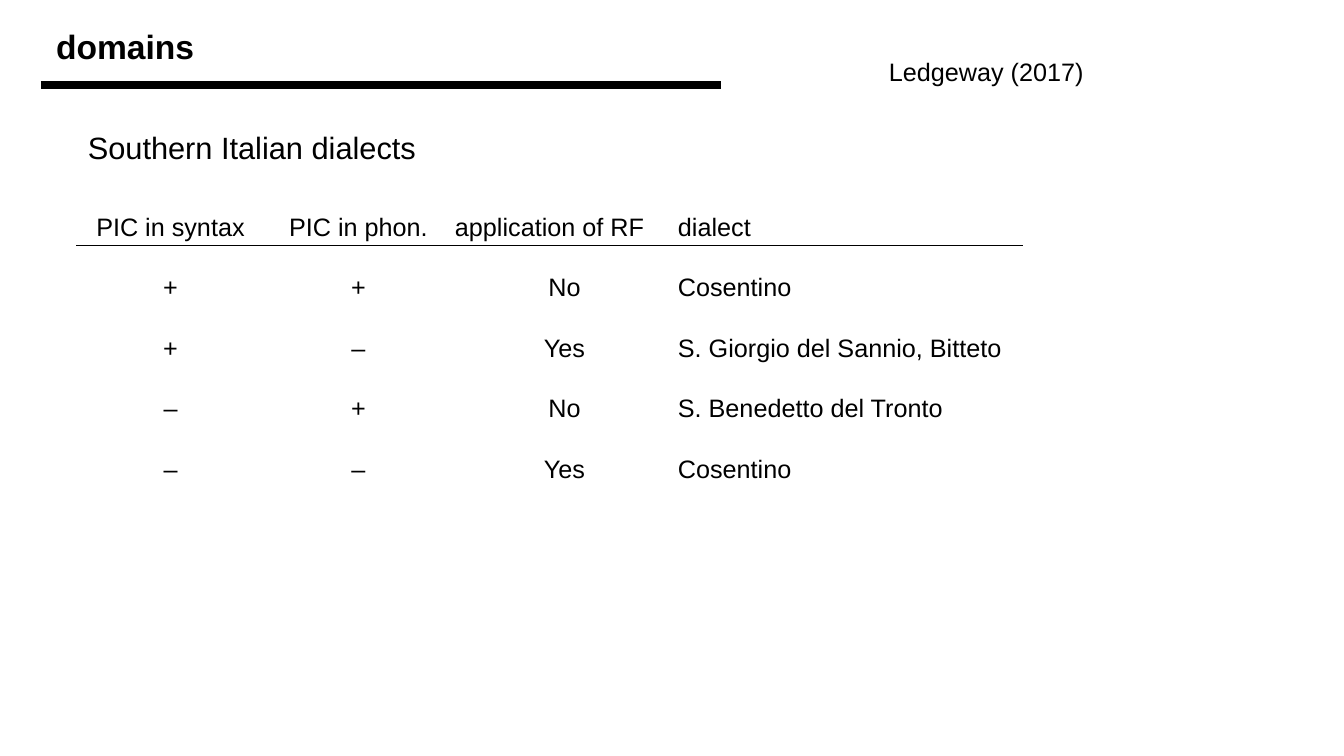
"""Build the slide on PIC domains in Southern Italian dialects."""
from lxml.etree import SubElement
from pptx import Presentation
from pptx.dml.color import RGBColor
from pptx.enum.shapes import MSO_CONNECTOR
from pptx.enum.text import MSO_ANCHOR, MSO_AUTO_SIZE, PP_ALIGN
from pptx.oxml.ns import qn
from pptx.util import Pt

PX = 914400 / 100.8
BLACK, WHITE = "000000", "FFFFFF"


def px(*lengths):
    return [round(length * PX) for length in lengths]


def write(frame, text, size, bold=False, align=PP_ALIGN.LEFT):
    paragraph = frame.paragraphs[0]
    paragraph.alignment = align
    run = paragraph.add_run()
    run.text = text
    run.font.name = "Arial"
    run.font.size = Pt(size)
    run.font.bold = bold
    run.font.color.rgb = RGBColor.from_string(BLACK)
    return paragraph


deck = Presentation()
deck.slide_width, deck.slide_height = px(1344, 756)
slide = deck.slides.add_slide(deck.slide_layouts[5])

heading = slide.shapes.title
heading.left, heading.top, heading.width, heading.height = px(46, 21, 842, 50)
heading.text_frame.vertical_anchor = MSO_ANCHOR.TOP
heading.text_frame.auto_size = MSO_AUTO_SIZE.NONE
write(heading.text_frame, "domains", 24, bold=True)

heading_rule = slide.shapes.add_connector(MSO_CONNECTOR.STRAIGHT, *px(41, 85, 721, 85))
heading_rule.line.color.rgb = RGBColor.from_string(BLACK)
heading_rule.line.width = Pt(6)
SubElement(heading_rule._element.spPr, qn("a:effectLst"))

for text, size, place in [
    ("Ledgeway (2017)", 18, (879, 51, 420, 40)),
    ("Southern Italian dialects", 22, (78, 124, 1198, 47)),
]:
    label = slide.shapes.add_textbox(*px(*place)).text_frame
    label.word_wrap = True
    write(label, text, size)

dialect_rows = [
    ("PIC in syntax", "PIC in phon.", "application of RF", "dialect"),
    ("+", "+", "No", "Cosentino"),
    ("+", "–", "Yes", "S. Giorgio del Sannio, Bitteto"),
    ("–", "+", "No", "S. Benedetto del Tronto"),
    ("–", "–", "Yes", "Cosentino"),
]
dialects = slide.shapes.add_table(5, 4, *px(77, 185, 945, 302)).table
dialects.first_row = dialects.horz_banding = False
for column, width in zip(dialects.columns, px(187, 189, 223, 346)):
    column.width = width

for r, row in enumerate(dialect_rows):
    for c, text in enumerate(row):
        cell = dialects.cell(r, c)
        cell.margin_left, cell.margin_right, cell.margin_top, cell.margin_bottom = px(2, 2, 0, 0)
        left_aligned = c == 3 or (r == 0 and c == 2)
        align = PP_ALIGN.LEFT if left_aligned else PP_ALIGN.CENTER
        write(cell.text_frame, text, 18, align=align).line_spacing = 2.0
        properties = cell._tc.get_or_add_tcPr()
        for side in "LRTB":
            under_header = (r, side) in [(0, "B"), (1, "T")]
            border = SubElement(properties, qn(f"a:ln{side}"), w=str(Pt(1)))
            fill = SubElement(border, qn("a:solidFill"))
            SubElement(fill, qn("a:srgbClr"), val=BLACK if under_header else WHITE)
        cell.fill.background()

deck.save("out.pptx")
